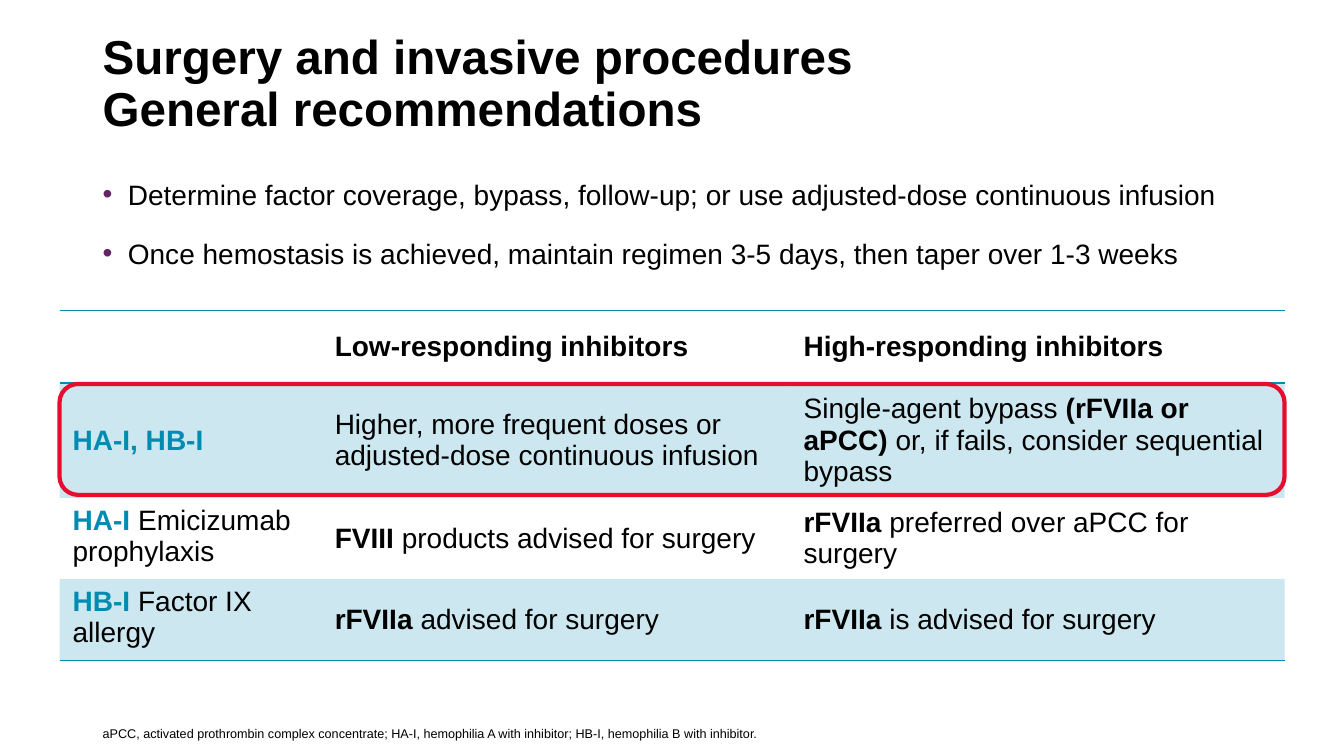
"""Build the slide on surgery and invasive procedures."""
from dataclasses import dataclass

from lxml import etree
from pptx import Presentation
from pptx import util as u
from pptx.dml.color import RGBColor
from pptx.enum import shapes, text
from pptx.oxml import ns

BLACK = RGBColor(0x00, 0x00, 0x00)
TEAL = RGBColor(0x00, 0x8B, 0xB0)
PLUM = RGBColor(0x64, 0x25, 0x66)
RED = RGBColor(0xE6, 0x0D, 0x2E)
FONT = "Arial"
MID = text.MSO_ANCHOR.MIDDLE
TOP = text.MSO_ANCHOR.TOP


@dataclass
class Span:
    words: str
    bold: bool = False
    color: RGBColor = BLACK


@dataclass
class Box:
    left: float
    top: float
    width: float
    height: float
    size: float
    lines: list[list[Span]]
    anchor: text.MSO_ANCHOR = TOP
    foot: float = 0.05
    bullet: bool = False
    leading: float = 1.0
    before: float = 0


@dataclass
class Cell:
    lines: list[list[Span]]
    anchor: text.MSO_ANCHOR = MID


BOXES = [
    Box(0.92, 0.25, 11.5, 1.19, 34,
        [[Span("Surgery and invasive procedures\vGeneral recommendations", True)]],
        anchor=MID, leading=0.9),
    Box(0.92, 1.71, 11.5, 5.05, 20,
        [[Span("Determine factor coverage, bypass, follow-up; or use adjusted-dose continuous infusion")],
         [Span("Once hemostasis is achieved, maintain regimen 3-5 days, then taper over 1-3 weeks")]],
        bullet=True, before=18),
    Box(0.92, 6.95, 10.85, 0.4, 9,
        [[Span("aPCC, activated prothrombin complex concentrate; HA-I, hemophilia A with inhibitor; "
               "HB-I, hemophilia B with inhibitor.")]],
        anchor=text.MSO_ANCHOR.BOTTOM, foot=0),
]

COLS = [2.6, 4.65, 4.9]
ROWS = [0.72, 1.07, 0.76, 0.76]
LEFT, HEAD = 0.59, 3.08
GRID = [
    [Cell([]),
     Cell([[Span("Low-responding inhibitors", True)]]),
     Cell([[Span("High-responding inhibitors", True)]])],
    [Cell([[Span("HA-I, HB-I", True, TEAL)]]),
     Cell([[Span("Higher, more frequent doses or")],
           [Span("adjusted-dose continuous infusion")]]),
     Cell([[Span("Single-agent bypass "), Span("(rFVIIa or aPCC) ", True),
            Span("or, if fails, consider sequential bypass")]])],
    [Cell([[Span("HA-I ", True, TEAL), Span("Emicizumab prophylaxis")]], TOP),
     Cell([[Span("FVIII ", True), Span("products advised for surgery")]]),
     Cell([[Span("rFVIIa", True), Span(" preferred over aPCC for surgery")]])],
    [Cell([[Span("HB-I ", True, TEAL), Span("Factor IX allergy")]], TOP),
     Cell([[Span("rFVIIa ", True), Span("advised for surgery")]]),
     Cell([[Span("rFVIIa", True), Span(" is advised for surgery")]])],
]


def child(node, tag: str, **attrs: str):
    """Append a drawing element and return it."""
    return etree.SubElement(node, ns.qn(tag), attrs)


def write(frame, lines: list[list[Span]], size: float) -> None:
    """Fill a text frame with styled lines."""
    frame.word_wrap = True
    frame.text = "\n".join("" for _ in lines)
    for para, line in zip(frame.paragraphs, lines):
        for span in line:
            start = len(para.runs)
            if "\v" in span.words:
                para.text = span.words
            else:
                para.add_run().text = span.words
            for run in para.runs[start:]:
                font = run.font
                font.name, font.size, font.bold = FONT, u.Pt(size), span.bold
                font.color.rgb = span.color


def dot(para) -> None:
    """Give a paragraph a coloured bullet and hanging indent."""
    props = para._p.get_or_add_pPr()
    props.set("marL", str(u.Inches(0.25)))
    props.set("indent", str(u.Inches(-0.25)))
    child(child(props, "a:buClr"), "a:srgbClr", val=str(PLUM))
    child(props, "a:buFont", typeface=FONT)
    child(props, "a:buChar", char="•")


def draw_box(slide, box: Box) -> None:
    """Draw one text box."""
    frame = slide.shapes.add_textbox(
        *map(u.Inches, (box.left, box.top, box.width, box.height))).text_frame
    write(frame, box.lines, box.size)
    frame.vertical_anchor = box.anchor
    frame.margin_bottom = u.Inches(box.foot)
    for num, para in enumerate(frame.paragraphs):
        para.line_spacing = box.leading
        if num:
            para.space_before = u.Pt(box.before)
        if box.bullet:
            dot(para)


def rule(cell, edges: str) -> None:
    """Line the named edges of a cell and clear the others."""
    props = cell._tc.get_or_add_tcPr()
    for edge in "LRTB":
        line = child(props, f"a:ln{edge}", w=str(u.Pt(1)))
        if edge in edges:
            child(child(line, "a:solidFill"), "a:srgbClr", val=str(TEAL))
        else:
            child(line, "a:noFill")


def draw_cell(cell, data: Cell, row: int) -> None:
    """Draw one table cell."""
    cell.margin_left = cell.margin_right = u.Inches(0.13)
    cell.margin_top = cell.margin_bottom = u.Inches(0.07)
    cell.vertical_anchor = data.anchor
    write(cell.text_frame, data.lines, 20)
    rule(cell, ("T" if row < 2 else "") + ("B" if row in (0, len(ROWS) - 1) else ""))
    if row % 2:
        cell.fill.solid()
        cell.fill.fore_color.rgb = TEAL
        tint = cell._tc.tcPr.find(ns.qn("a:solidFill"))[0]
        child(tint, "a:alpha", val="20000")
    else:
        cell.fill.background()


def draw_table(slide) -> None:
    """Draw the table of advice."""
    area = map(u.Inches, (LEFT, HEAD, sum(COLS), sum(ROWS)))
    table = slide.shapes.add_table(len(ROWS), len(COLS), *area).table
    table.first_row = table.horz_banding = False
    for col, width in zip(table.columns, COLS):
        col.width = u.Inches(width)
    for num, (row, height) in enumerate(zip(table.rows, ROWS)):
        row.height = u.Inches(height)
        for cell, data in zip(row.cells, GRID[num]):
            draw_cell(cell, data, num)


def draw_ring(slide) -> None:
    """Draw the red ring round the first row of advice."""
    ring = slide.shapes.add_shape(
        shapes.MSO_SHAPE.ROUNDED_RECTANGLE,
        *map(u.Inches, (LEFT, 3.81, sum(COLS), 1.1)))
    ring.shadow.inherit = False
    ring.fill.background()
    ring.line.color.rgb = RED
    ring.line.width = u.Pt(3)


def main() -> None:
    """Build and save the slide."""
    deck = Presentation()
    deck.slide_width, deck.slide_height = u.Inches(13.33), u.Inches(7.5)
    slide = deck.slides.add_slide(deck.slide_layouts[6])
    for box in BOXES:
        draw_box(slide, box)
    draw_table(slide)
    draw_ring(slide)
    deck.save("out.pptx")


if __name__ == "__main__":
    main()
